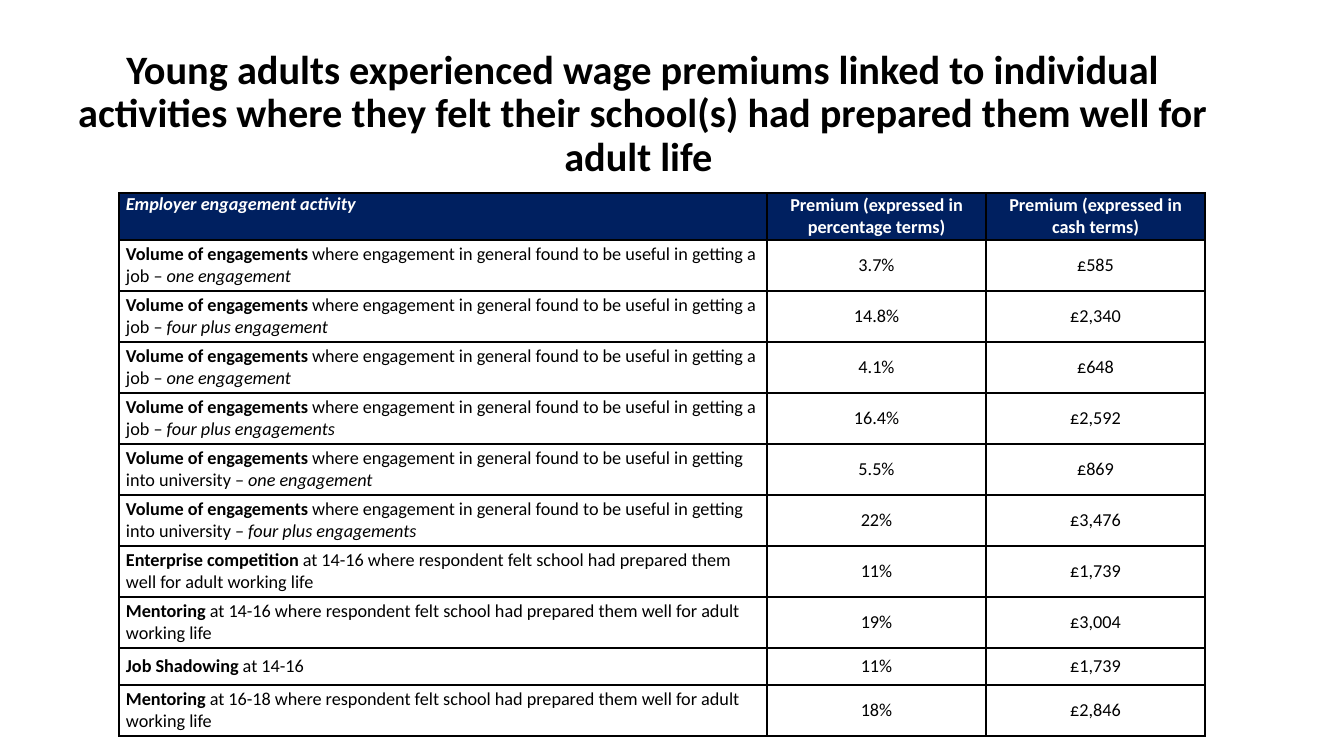
"""Build a slide with a table of wage premiums by employer engagement activity."""
import pptx
import pptx.dml.color
import pptx.enum.text
import pptx.oxml
import pptx.oxml.ns
import pptx.util

EMU_PER_PX = 914400 / 100.8
FONT = "Calibri"
BLACK, WHITE, NAVY = "000000", "FFFFFF", "002060"
CENTER = pptx.enum.text.PP_ALIGN.CENTER
LEFT = pptx.enum.text.PP_ALIGN.LEFT
MIDDLE = pptx.enum.text.MSO_ANCHOR.MIDDLE
TOP = pptx.enum.text.MSO_ANCHOR.TOP

TITLE = (
    "Young adults experienced wage premiums linked to individual activities "
    "where they felt their school(s) had prepared them well for adult life "
)
HEADINGS = [
    "Employer engagement activity",
    "Premium (expressed in percentage terms)",
    "Premium (expressed in cash terms)",
]
VOLUME = "Volume of engagements"
JOB = " where engagement in general found to be useful in getting a job – "
UNIVERSITY = " where engagement in general found to be useful in getting into university – "
PREPARED = "where respondent felt school had prepared them well for adult working life"
PREMIUMS = [
    (VOLUME, JOB, "one engagement", "3.7%", "£585"),
    (VOLUME, JOB, "four plus engagement", "14.8%", "£2,340"),
    (VOLUME, JOB, "one engagement", "4.1%", "£648"),
    (VOLUME, JOB, "four plus engagements", "16.4%", "£2,592"),
    (VOLUME, UNIVERSITY, "one engagement", "5.5%", "£869"),
    (VOLUME, UNIVERSITY, "four plus engagements", "22%", "£3,476"),
    ("Enterprise competition", f" at 14-16 {PREPARED}", "", "11%", "£1,739"),
    ("Mentoring", f" at 14-16 {PREPARED}", "", "19%", "£3,004"),
    ("Job Shadowing", " at 14-16", "", "11%", "£1,739"),
    ("Mentoring ", f"at 16-18 {PREPARED}", "", "18%", "£2,846"),
]
COLUMN_WIDTHS = [648, 219, 219]
HEADER_HEIGHT, ROW_HEIGHT, SHORT_ROW_HEIGHT = 47, 51, 37


def px(length):
    """Turn pixels into EMU."""
    return pptx.util.Emu(round(length * EMU_PER_PX))


def colour(value):
    """Turn a hex string into a colour."""
    return pptx.dml.color.RGBColor.from_string(value)


def style_span(span, size, ink, bold=False, italic=False):
    """Format one run of text."""
    span.font.name = FONT
    span.font.size = pptx.util.Pt(size)
    span.font.color.rgb = colour(ink)
    span.font.bold = bold
    span.font.italic = italic


def add_title(page):
    """Add the centred slide title."""
    box = page.shapes.add_textbox(px(65), px(53), px(1156), px(123))
    frame = box.text_frame
    frame.word_wrap = True
    frame.vertical_anchor = MIDDLE
    frame.text = TITLE
    para = frame.paragraphs[0]
    para.alignment = CENTER
    para.line_spacing = 0.9
    style_span(para.runs[0], 28.8, BLACK, bold=True)


def add_borders(cell):
    """Draw a thin black line on every side of a cell."""
    properties = cell._tc.get_or_add_tcPr()
    for side in ("lnL", "lnR", "lnT", "lnB"):
        properties.append(pptx.oxml.parse_xml(
            f'<a:{side} {pptx.oxml.ns.nsdecls("a")} w="{pptx.util.Pt(1)}">'
            f'<a:solidFill><a:srgbClr val="{BLACK}"/></a:solidFill></a:{side}>'
        ))


def fill_cell(cell, spans, alignment, ink=BLACK, background=None, anchor=MIDDLE):
    """Write (text, bold, italic) spans in a cell and style it."""
    add_borders(cell)
    if background:
        cell.fill.solid()
        cell.fill.fore_color.rgb = colour(background)
    else:
        cell.fill.background()
    cell.margin_left = cell.margin_right = px(7)
    cell.margin_top = cell.margin_bottom = 0
    cell.vertical_anchor = anchor
    para = cell.text_frame.paragraphs[0]
    para.alignment = alignment
    for text, bold, italic in spans:
        span = para.add_run()
        span.text = text
        style_span(span, 13, ink, bold, italic)


def add_premium_table(page):
    """Add the table of premiums with its heading row."""
    heights = [HEADER_HEIGHT] + [
        ROW_HEIGHT if activity != "Job Shadowing" else SHORT_ROW_HEIGHT
        for activity, *_ in PREMIUMS
    ]
    table = page.shapes.add_table(
        len(heights), len(COLUMN_WIDTHS),
        px(119), px(193), px(sum(COLUMN_WIDTHS)), px(sum(heights)),
    ).table
    table.first_row = False
    table.horz_banding = False
    for column, width in zip(table.columns, COLUMN_WIDTHS):
        column.width = px(width)
    for row, height in zip(table.rows, heights):
        row.height = px(height)
    for index, heading in enumerate(HEADINGS):
        first = index == 0
        fill_cell(
            table.cell(0, index), [(heading, True, first)],
            LEFT if first else CENTER, WHITE, NAVY, TOP if first else MIDDLE,
        )
    for index, (activity, detail, count, *values) in enumerate(PREMIUMS, 1):
        spans = [(activity, True, False), (detail, False, False)]
        if count:
            spans.append((count, False, True))
        fill_cell(table.cell(index, 0), spans, LEFT)
        for column, value in enumerate(values, 1):
            fill_cell(table.cell(index, column), [(value, False, False)], CENTER)


def main():
    """Build and save the deck."""
    deck = pptx.Presentation()
    deck.slide_width = px(1344)
    deck.slide_height = px(756)
    page = deck.slides.add_slide(deck.slide_layouts[6])
    add_title(page)
    add_premium_table(page)
    deck.save("out.pptx")


if __name__ == "__main__":
    main()
